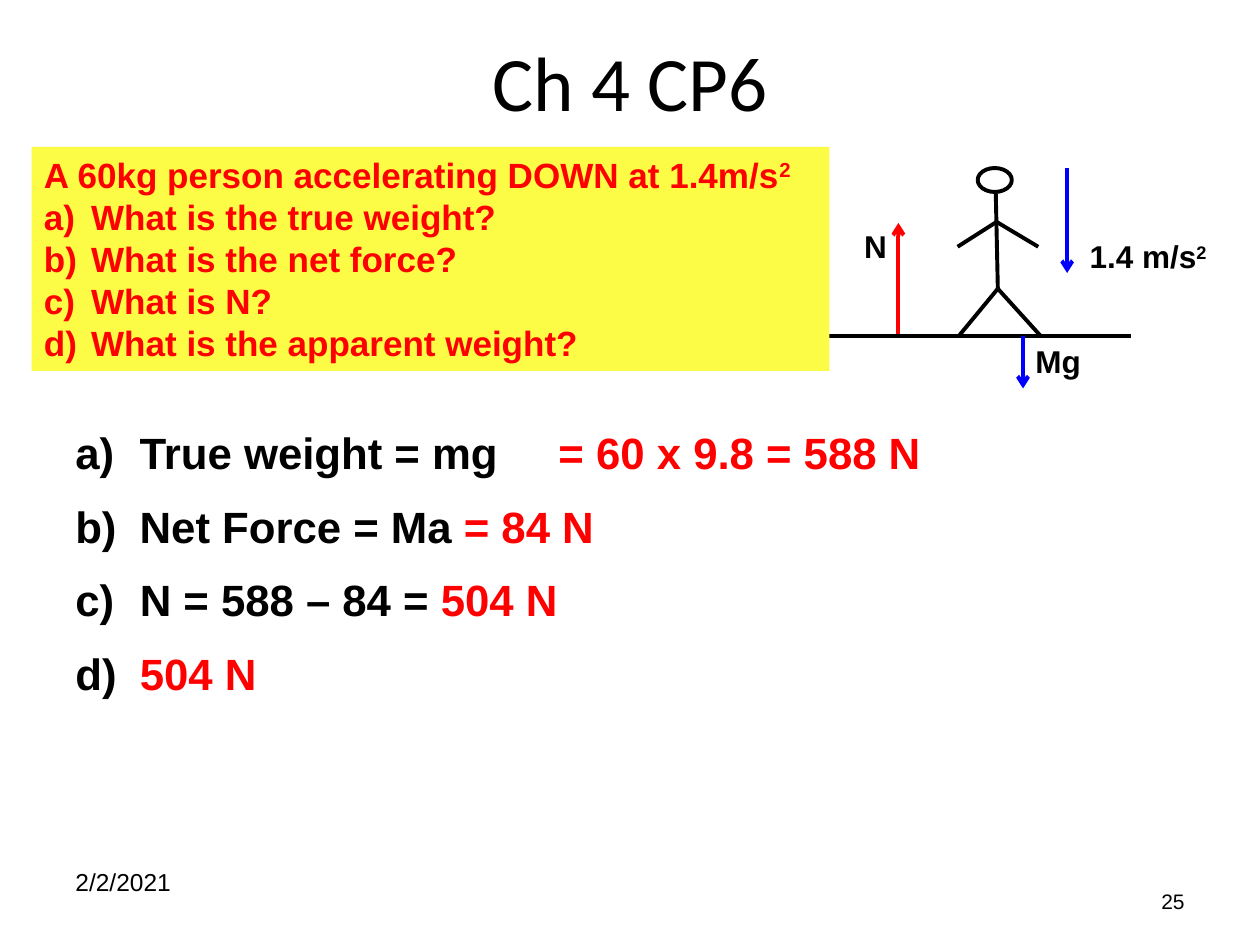
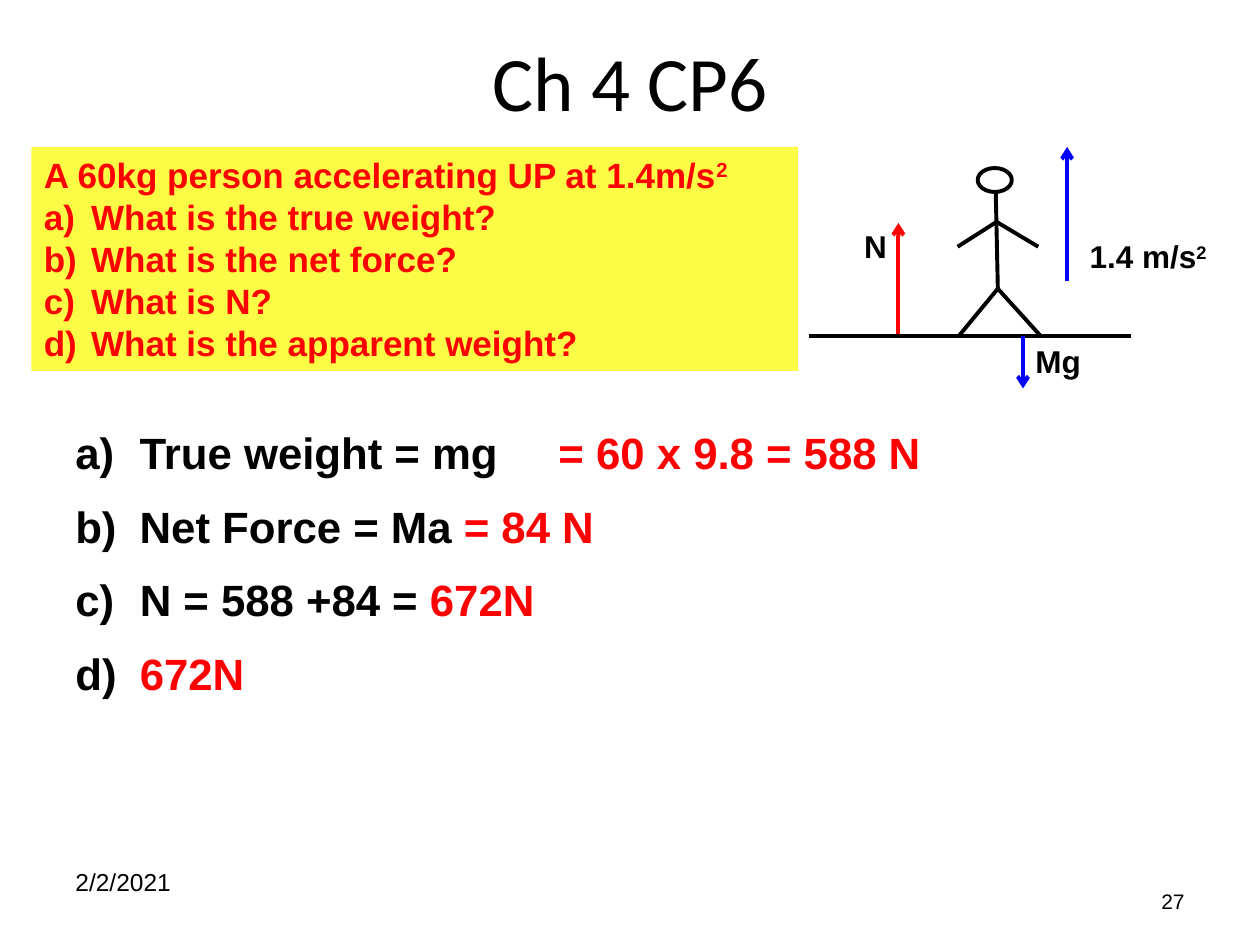
from dataclasses import dataclass

from lxml import etree
from pptx import Presentation
from pptx.dml.color import RGBColor
from pptx.enum.shapes import MSO_CONNECTOR, MSO_SHAPE
from pptx.enum.text import MSO_ANCHOR, PP_ALIGN
from pptx.oxml.ns import qn
from pptx.util import Pt

STRAIGHT, OVAL, RECTANGLE = MSO_CONNECTOR.STRAIGHT, MSO_SHAPE.OVAL, MSO_SHAPE.RECTANGLE
TOP, MIDDLE = MSO_ANCHOR.TOP, MSO_ANCHOR.MIDDLE
LEFT, CENTER, RIGHT = PP_ALIGN.LEFT, PP_ALIGN.CENTER, PP_ALIGN.RIGHT

BLACK, RED, BLUE, YELLOW = "000000", "FF0000", "0000FF", "FCFC46"
LINE_WIDTH = 2.25
GROUND_Y = 192
ANSWER_LEFT, ANSWER_TOP, ANSWER_PITCH, ANSWER_HEIGHT = 36, 240, 42, 37.4
ANSWER_HANG, QUESTION_HANG = 36.8, 27

# Text styles
TITLE = {"size": Pt(44), "name": "Calibri", "bold": False}
ANSWER = {"size": Pt(25), "name": "Arial", "bold": True}
QUESTION = {"size": Pt(20), "name": "Arial", "bold": True}
FORCE = {"size": Pt(18), "name": "Arial", "bold": True}
DATE = {"size": Pt(14), "name": "Arial", "bold": False}
NUMBER = {"size": Pt(12), "name": "Arial", "bold": False}


@dataclass(frozen=True)
class Span:
    text: str
    color: str = BLACK
    raised: bool = False


@dataclass(frozen=True)
class Paragraph:
    spans: tuple[Span, ...]
    hang: float = 0
    lettered: bool = False


@dataclass(frozen=True)
class Label:
    left: float
    top: float
    width: float
    height: float
    paragraphs: tuple[Paragraph, ...]
    style: dict
    align: PP_ALIGN = LEFT
    anchor: MSO_ANCHOR = TOP


@dataclass(frozen=True)
class Stroke:
    start: tuple[float, float]
    end: tuple[float, float]
    color: str = BLACK
    arrow: bool = False


@dataclass(frozen=True)
class Problem:
    direction: str
    question_width: float
    acceleration: Stroke
    sum_text: str
    normal_force: str
    page_number: str


SHOULDER, HIP = (569.5, 126.8), (570.2, 165)
BODY = (
    Stroke((569, 109.5), HIP),
    Stroke(SHOULDER, (593.3, 141)),
    Stroke(SHOULDER, (547.2, 141)),
    Stroke(HIP, (547.9, GROUND_Y)),
    Stroke(HIP, (594.7, GROUND_Y)),
)
FORCES = (
    Stroke((513.4, GROUND_Y), (513.4, 127.4), RED, True),
    Stroke((462.2, GROUND_Y), (646.5, GROUND_Y)),
    Stroke((584.6, GROUND_Y), (584.6, 222), BLUE, True),
)
QUESTIONS = ("What is the true weight?", "What is the net force?",
             "What is N?", "What is the apparent weight?")
PROBLEMS = (
    Problem("DOWN", 456, Stroke((609.8, 96), (609.8, 156), BLUE, True),
            "N = 588 – 84 = ", "504 N", "25"),
    Problem("UP", 438, Stroke((609.8, 160.8), (609.8, 84), BLUE, True),
            "N = 588 +84 = ", "672N", "27"),
)


def rgb(color: str) -> RGBColor:
    return RGBColor.from_string(color)


def single(*spans: Span) -> tuple[Paragraph, ...]:
    return (Paragraph(spans),)


def fill_text(frame, label: Label) -> None:
    for name, value in {"word_wrap": True, "vertical_anchor": label.anchor}.items():
        setattr(frame, name, value)
    for index, paragraph in enumerate(label.paragraphs):
        para = frame.add_paragraph() if index else frame.paragraphs[0]
        para.alignment = label.align
        if paragraph.hang:
            properties = para._p.get_or_add_pPr()
            properties.set("marL", str(Pt(paragraph.hang)))
            properties.set("indent", str(-Pt(paragraph.hang)))
            if paragraph.lettered:
                etree.SubElement(properties, qn("a:buAutoNum"), type="alphaLcParenR")
        for span in paragraph.spans:
            run = para.add_run()
            run.text = span.text
            for name, value in label.style.items():
                setattr(run.font, name, value)
            run.font.color.rgb = rgb(span.color)
            if span.raised:
                run._r.get_or_add_rPr().set("baseline", "30000")


def bounds(label: Label) -> tuple:
    return tuple(Pt(v) for v in (label.left, label.top, label.width, label.height))


def draw_label(shapes, label: Label) -> None:
    box = shapes.add_textbox(*bounds(label))
    fill_text(box.text_frame, label)


def draw_stroke(shapes, stroke: Stroke) -> None:
    points = [Pt(value) for value in stroke.start + stroke.end]
    connector = shapes.add_connector(STRAIGHT, *points)
    connector.line.color.rgb = rgb(stroke.color)
    connector.line.width = Pt(LINE_WIDTH)
    if stroke.arrow:
        etree.SubElement(connector.line._get_or_add_ln(), qn("a:tailEnd"), type="arrow")
    etree.SubElement(connector._element.spPr, qn("a:effectLst"))


def draw_frame(page, page_number: str) -> None:
    """Title, date and page number."""
    for label in (
        Label(516, 500.4, 168, 28.8, single(Span(page_number)), NUMBER, RIGHT, MIDDLE),
        Label(36, 492, 168, 37.4, single(Span("2/2/2021")), DATE),
        Label(36, 0, 648, 92, single(Span("Ch 4 CP6")), TITLE, CENTER, MIDDLE),
    ):
        draw_label(page.shapes, label)


def draw_answers(page, problem: Problem) -> None:
    answers = (
        (282, (Span("a)\tTrue weight = mg"),)),
        (330, (Span("b)\tNet Force = Ma "), Span("= 84 N", RED))),
        (306, (Span("c)\t" + problem.sum_text), Span(problem.normal_force, RED))),
        (126, (Span("d)\t"), Span(problem.normal_force, RED))),
    )
    for row, (width, spans) in enumerate(answers):
        draw_label(page.shapes, Label(
            ANSWER_LEFT, ANSWER_TOP + row * ANSWER_PITCH, width, ANSWER_HEIGHT,
            (Paragraph(spans, ANSWER_HANG),), ANSWER))
    draw_label(page.shapes, Label(312, ANSWER_TOP, 228, ANSWER_HEIGHT,
                                  single(Span("= 60 x 9.8 = 588 N", RED)), ANSWER))


def draw_diagram(page, acceleration: Stroke) -> None:
    """Stick figure on the ground with its forces."""
    shapes = page.shapes.add_group_shape().shapes
    head = shapes.add_shape(OVAL, Pt(558.7), Pt(96), Pt(19.5), Pt(13.7))
    head.shadow.inherit = False
    head.fill.background()
    head.line.color.rgb = rgb(BLACK)
    head.line.width = Pt(LINE_WIDTH)
    for stroke in BODY + FORCES + (acceleration,):
        draw_stroke(shapes, stroke)
    for label in (
        Label(584.6, GROUND_Y, 63, 29, single(Span("Mg")), FORCE),
        Label(615.6, 132, 92.4, 29, single(Span("1.4 m/s"), Span("2", raised=True)), FORCE),
        Label(486.7, 126, 36.7, 29, single(Span("N")), FORCE),
    ):
        draw_label(shapes, label)


def draw_question(page, problem: Problem) -> None:
    heading = Paragraph((
        Span(f"A 60kg person accelerating {problem.direction} at 1.4m/s", RED),
        Span("2", RED, True)), QUESTION_HANG)
    items = tuple(Paragraph((Span(text, RED),), QUESTION_HANG, True) for text in QUESTIONS)
    label = Label(18, 84, problem.question_width, 128, (heading,) + items, QUESTION)
    panel = page.shapes.add_shape(RECTANGLE, *bounds(label))
    panel.shadow.inherit = False
    panel.fill.solid()
    panel.fill.fore_color.rgb = rgb(YELLOW)
    panel.line.fill.background()
    fill_text(panel.text_frame, label)


def main() -> None:
    deck = Presentation()
    deck.slide_width, deck.slide_height = Pt(720), Pt(540)
    for problem in PROBLEMS:
        page = deck.slides.add_slide(deck.slide_layouts[6])
        draw_frame(page, problem.page_number)
        draw_answers(page, problem)
        draw_diagram(page, problem.acceleration)
        draw_question(page, problem)
    deck.save("out.pptx")


if __name__ == "__main__":
    main()
